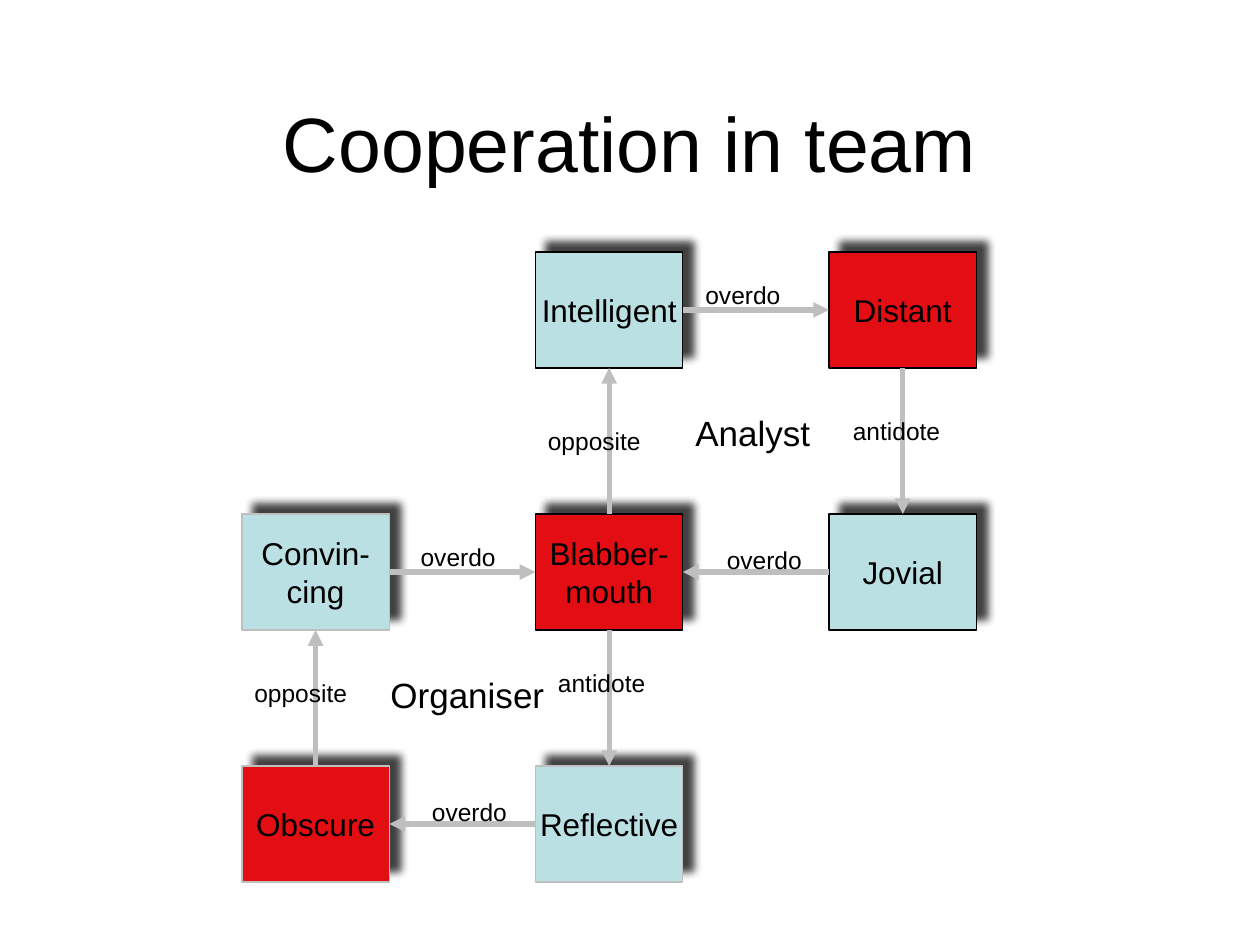
from typing import NamedTuple

import pptx
import pptx.dml.color
import pptx.enum.shapes
import pptx.enum.text
import pptx.oxml
import pptx.oxml.ns
import pptx.util

RGBColor = pptx.dml.color.RGBColor
Inches = pptx.util.Inches
Pt = pptx.util.Pt
PP_ALIGN = pptx.enum.text.PP_ALIGN
MSO_ANCHOR = pptx.enum.text.MSO_ANCHOR

BLACK = RGBColor(0x00, 0x00, 0x00)
GREY = RGBColor(0xBF, 0xBF, 0xBF)
BLUE = RGBColor(0xBB, 0xE0, 0xE3)
RED = RGBColor(0xE3, 0x0E, 0x13)

# Grid of boxes, in inches
COLS = (1.92, 4.25, 6.58)
ROWS = (2, 4.08, 6.08)
BOX_W, BOX_H = 1.17, 0.92
TOP, LEFT, BOTTOM, RIGHT = range(4)  # connection sites of a rectangle

A_NS = pptx.oxml.ns.nsdecls("a")
SHADOW = (
    f'<a:outerShdw {A_NS} blurRad="{Pt(5)}" dist="{Pt(8.5)}" dir="{315 * 60000}" '
    'algn="ctr" rotWithShape="0"><a:srgbClr val="000000">'
    '<a:alpha val="75000"/></a:srgbClr></a:outerShdw>'
)


class Box(NamedTuple):
    text: str
    col: int
    row: int
    fill: RGBColor
    line: RGBColor


class Arrow(NamedTuple):
    start: str
    start_site: int
    end: str
    end_site: int


class Label(NamedTuple):
    text: str
    left: float
    top: float
    width: float
    height: float = 0.33
    size: int = 14


BOXES = {
    "intelligent": Box("Intelligent", 1, 0, BLUE, BLACK),
    "blabbermouth": Box("Blabber-\nmouth", 1, 1, RED, BLACK),
    "jovial": Box("Jovial", 2, 1, BLUE, BLACK),
    "distant": Box("Distant", 2, 0, RED, BLACK),
    "convincing": Box("Convin-\ncing", 0, 1, BLUE, GREY),
    "obscure": Box("Obscure", 0, 2, RED, GREY),
    "reflective": Box("Reflective", 1, 2, BLUE, GREY),
}

ARROWS = (
    Arrow("blabbermouth", TOP, "intelligent", BOTTOM),
    Arrow("distant", BOTTOM, "jovial", TOP),
    Arrow("jovial", LEFT, "blabbermouth", RIGHT),
    Arrow("intelligent", RIGHT, "distant", LEFT),
    Arrow("obscure", TOP, "convincing", BOTTOM),
    Arrow("blabbermouth", BOTTOM, "reflective", TOP),
    Arrow("reflective", LEFT, "obscure", RIGHT),
    Arrow("convincing", RIGHT, "blabbermouth", LEFT),
)

LABELS = (
    Label("overdo", 5.5, 2.17, 0.8),
    Label("opposite", 4.25, 3.33, 0.94),
    Label("overdo", 5.67, 4.28, 0.8),
    Label("antidote", 6.67, 3.25, 0.92),
    Label("overdo", 3.24, 4.25, 0.8),
    Label("opposite", 1.92, 5.33, 0.94),
    Label("overdo", 3.33, 6.28, 0.8),
    Label("antidote", 4.33, 5.25, 0.92),
    Label("Analyst", 5.42, 3.22, 1.11, 0.43, 20),
    Label("Organiser", 3, 5.3, 1.42, 0.43, 20),
)


def set_text(sp, text: str, size: int, align=PP_ALIGN.LEFT, **frame) -> None:
    """Write one paragraph per line and format the text frame."""
    tf = sp.text_frame
    for name, value in frame.items():
        setattr(tf, name, value)
    tf.text = text
    for p in tf.paragraphs:
        p.alignment = align
        for name, value in {"name": "Arial", "size": Pt(size)}.items():
            setattr(p.font, name, value)
        p.font.color.rgb = BLACK


def add_box(s, box: Box):
    sp = s.shapes.add_shape(
        pptx.enum.shapes.MSO_SHAPE.RECTANGLE,
        Inches(COLS[box.col]), Inches(ROWS[box.row]), Inches(BOX_W), Inches(BOX_H))
    sp.fill.solid()
    sp.fill.fore_color.rgb = box.fill
    sp.line.color.rgb = box.line
    sp.line.width = Pt(0.75)
    sp.shadow.inherit = False
    effects = sp._element.spPr.find(pptx.oxml.ns.qn("a:effectLst"))
    effects.append(pptx.oxml.parse_xml(SHADOW))
    set_text(sp, box.text, 18, PP_ALIGN.CENTER,
             word_wrap=False, vertical_anchor=MSO_ANCHOR.MIDDLE)
    return sp


def add_arrow(s, arrow: Arrow, boxes: dict) -> None:
    cx = s.shapes.add_connector(
        pptx.enum.shapes.MSO_CONNECTOR.STRAIGHT, 0, 0, 0, 0)
    cx.begin_connect(boxes[arrow.start], arrow.start_site)
    cx.end_connect(boxes[arrow.end], arrow.end_site)
    cx.line.color.rgb = GREY
    cx.line.width = Pt(3)
    cx.line._get_or_add_ln().append(
        pptx.oxml.parse_xml(f'<a:tailEnd {A_NS} type="triangle"/>'))
    cx._element.spPr.append(pptx.oxml.parse_xml(f"<a:effectLst {A_NS}/>"))


def add_label(s, label: Label) -> None:
    sp = s.shapes.add_textbox(*map(Inches, label[1:5]))
    set_text(sp, label.text, label.size, word_wrap=False,
             auto_size=pptx.enum.text.MSO_AUTO_SIZE.SHAPE_TO_FIT_TEXT)


def main() -> None:
    prs = pptx.Presentation()
    prs.slide_width, prs.slide_height = Inches(10), Inches(7.5)
    s = prs.slides.add_slide(prs.slide_layouts[6])

    # Title
    title = s.shapes.add_textbox(Inches(0.75), Inches(0.5), Inches(8.5), Inches(1.25))
    set_text(title, "Cooperation in team", 44, PP_ALIGN.CENTER,
             word_wrap=True, vertical_anchor=MSO_ANCHOR.MIDDLE)

    # Two squares of qualities that share one corner
    boxes = {key: add_box(s, box) for key, box in BOXES.items()}
    for arrow in ARROWS:
        add_arrow(s, arrow, boxes)
    for label in LABELS:
        add_label(s, label)

    prs.save("out.pptx")


if __name__ == "__main__":
    main()
